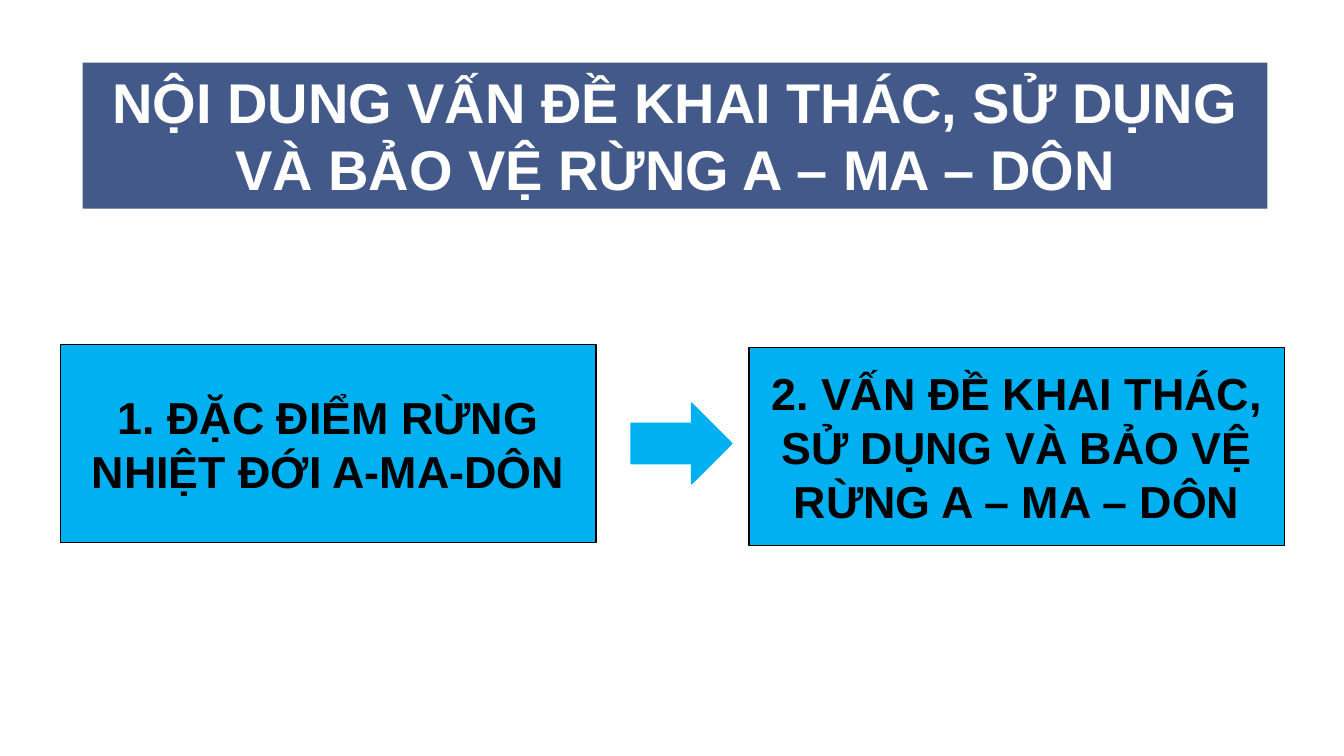
from lxml import etree
from pptx import Presentation
from pptx.dml.color import RGBColor
from pptx.enum.shapes import MSO_SHAPE as SHAPE
from pptx.enum.text import MSO_ANCHOR as ANCHOR, MSO_AUTO_SIZE as AUTO_SIZE, PP_ALIGN as ALIGN
from pptx.oxml.ns import qn
from pptx.util import Inches, Pt

NAVY = RGBColor(0x00, 0x20, 0x60)
SKY = RGBColor(0x00, 0xB0, 0xF0)
BLACK = RGBColor(0x00, 0x00, 0x00)
WHITE = RGBColor(0xFF, 0xFF, 0xFF)

TITLE = "NỘI DUNG VẤN ĐỀ KHAI THÁC, SỬ DỤNG VÀ BẢO VỆ RỪNG A – MA – DÔN"
TOPICS = [
    (0.6, 3.42, "1. ĐẶC ĐIỂM RỪNG NHIỆT ĐỚI A-MA-DÔN"),
    (7.43, 3.45, "2. VẤN ĐỀ KHAI THÁC, SỬ DỤNG VÀ BẢO VỆ RỪNG A – MA – DÔN"),
]


def set_text(shape, text, size, color, anchor):
    tf = shape.text_frame
    tf.text = text
    tf.word_wrap = True
    tf.auto_size = AUTO_SIZE.NONE
    tf.vertical_anchor = anchor
    p = tf.paragraphs[0]
    p.alignment = ALIGN.CENTER
    font = p.runs[0].font
    font.name = "Arial"
    font.size = Pt(size)
    font.bold = True
    font.color.rgb = color


def set_opacity(shape, percent):
    color = shape.fill._xPr.find(qn("a:solidFill"))[0]
    etree.SubElement(color, qn("a:alpha"), val=str(percent * 1000))


def add_title(s):
    title = s.shapes.title
    title.left, title.top = Inches(0.82), Inches(0.62)
    title.width, title.height = Inches(11.75), Inches(1.45)
    title.fill.solid()
    title.fill.fore_color.rgb = NAVY
    set_opacity(title, 74)
    set_text(title, TITLE, 40, WHITE, ANCHOR.TOP)


def add_sky_shape(s, kind, left, top, width, height, line_color):
    sp = s.shapes.add_shape(kind, Inches(left), Inches(top), Inches(width), Inches(height))
    sp.shadow.inherit = False
    sp.fill.solid()
    sp.fill.fore_color.rgb = SKY
    sp.line.color.rgb = line_color
    sp.line.width = Pt(1)
    return sp


def main():
    prs = Presentation()
    prs.slide_width, prs.slide_height = Inches(13.33), Inches(7.5)
    s = prs.slides.add_slide(prs.slide_layouts[5])
    add_title(s)
    for left, top, text in TOPICS:
        box = add_sky_shape(s, SHAPE.RECTANGLE, left, top, 5.31, 1.96, BLACK)
        set_text(box, text, 32, BLACK, ANCHOR.MIDDLE)
    add_sky_shape(s, SHAPE.RIGHT_ARROW, 6.26, 4, 1, 0.8, SKY)
    prs.save("out.pptx")


if __name__ == "__main__":
    main()
